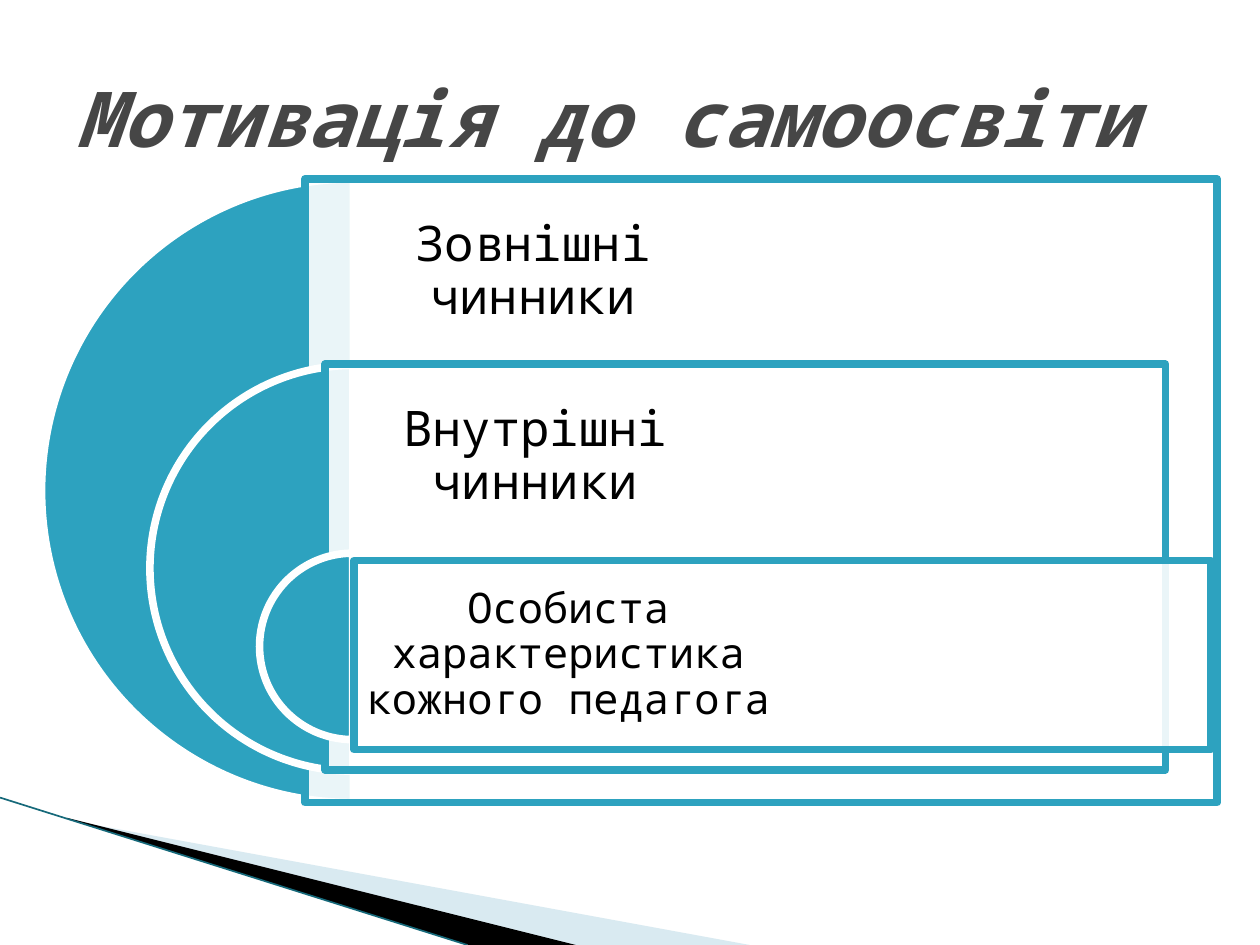
"""Build the slide on motivation for self-education."""
from dataclasses import dataclass

from lxml import etree
from pptx import Presentation
from pptx.dml.color import RGBColor
from pptx.enum.shapes import MSO_CONNECTOR, MSO_SHAPE
from pptx.enum.text import MSO_ANCHOR, PP_ALIGN
from pptx.oxml.ns import qn
from pptx.shapes.autoshape import Shape
from pptx.slide import Slide
from pptx.util import Inches, Pt

PIE = MSO_SHAPE.PIE
RECTANGLE = MSO_SHAPE.RECTANGLE
STRAIGHT = MSO_CONNECTOR.STRAIGHT
MIDDLE = MSO_ANCHOR.MIDDLE
CENTER = PP_ALIGN.CENTER
LEFT = PP_ALIGN.LEFT


@dataclass(frozen=True)
class Theme:
    font: str = "Noto Sans Mono"
    accent: str = "2DA2BF"
    white: str = "FFFFFF"
    black: str = "000000"
    title: str = "464646"
    pale: str = "A0CBDC"
    edge: str = "16697A"
    title_size: int = 44
    factor_size: int = 28
    detail_size: int = 24
    outline: float = 4.33
    edge_width: float = 0.95


@dataclass(frozen=True)
class Box:
    left: float
    top: float
    width: float
    height: float

    def lengths(self) -> tuple[int, ...]:
        return tuple(map(Inches, (self.left, self.top, self.width, self.height)))


@dataclass(frozen=True)
class Factor:
    text: str
    pie: Box
    panel: Box
    text_height: float
    size: int
    inset: float


@dataclass(frozen=True)
class Wedge:
    points: tuple[tuple[float, float], ...]
    color: str
    opacity: int = 100


THEME = Theme()
WEDGES = (
    Wedge(((0.55, 6.51), (5.95, 7.5), (4.56, 7.5), (0.55, 6.5)), THEME.pale, 40),
    Wedge(((0.53, 6.49), (4.57, 7.5), (3.72, 7.5), (0.54, 6.5)), THEME.black),
)
FACTORS = (
    Factor("Зовнішні чинники", Box(0.33, 1.42, 4.95, 4.95),
           Box(2.42, 1.42, 7.24, 4.95), 1.48, THEME.factor_size, 0.12),
    Factor("Внутрішні чинники", Box(1.19, 2.9, 3.22, 3.22),
           Box(2.58, 2.89, 6.67, 3.22), 1.48, THEME.factor_size, 0.12),
    Factor("Особиста характеристика кожного педагога", Box(2.06, 4.39, 1.48, 1.48),
           Box(2.81, 4.45, 6.8, 1.5), 1.5, THEME.detail_size, 0.1),
)


def fill_shape(shape: Shape, color: str, opacity: int = 100) -> None:
    """Give a shape a solid fill of the given opacity and no shadow."""
    shape.shadow.inherit = False
    shape.fill.solid()
    shape.fill.fore_color.rgb = RGBColor.from_string(color)
    if opacity < 100:
        color_element = shape.fill._xPr.find(qn("a:solidFill"))[0]
        etree.SubElement(color_element, qn("a:alpha")).set("val", str(opacity * 1000))


def add_wedge(slide: Slide, wedge: Wedge) -> None:
    """Draw one corner wedge."""
    start, *others = [(Inches(x), Inches(y)) for x, y in wedge.points]
    builder = slide.shapes.build_freeform(*start)
    builder.add_line_segments(others, close=True)
    shape = builder.convert_to_shape()
    fill_shape(shape, wedge.color, wedge.opacity)
    shape.line.fill.background()


def add_edge(slide: Slide) -> None:
    """Draw the thin line along the corner wedges."""
    edge = slide.shapes.add_connector(
        STRAIGHT, Inches(0), Inches(6.33), Inches(3.71), Inches(7.5))
    edge.line.color.rgb = RGBColor.from_string(THEME.edge)
    edge.line.width = Pt(THEME.edge_width)
    etree.SubElement(edge._element.spPr, qn("a:effectLst"))


def add_outlined(slide: Slide, kind: MSO_SHAPE, box: Box, fill: str, line: str,
                 opacity: int = 100) -> Shape:
    """Draw a filled preset shape with a thick outline."""
    shape = slide.shapes.add_shape(kind, *box.lengths())
    fill_shape(shape, fill, opacity)
    shape.line.color.rgb = RGBColor.from_string(line)
    shape.line.width = Pt(THEME.outline)
    return shape


def add_text(slide: Slide, box: Box, text: str, size: int, color: str, inset: float,
             alignment: PP_ALIGN = CENTER, spacing: float = 0.9,
             emphasis: bool = False) -> None:
    """Draw a vertically centred text box."""
    frame = slide.shapes.add_textbox(*box.lengths()).text_frame
    frame.word_wrap = True
    frame.vertical_anchor = MIDDLE
    frame.margin_left = frame.margin_right = Inches(inset)
    frame.margin_top = frame.margin_bottom = Inches(inset)
    paragraph = frame.paragraphs[0]
    paragraph.text = text
    paragraph.alignment = alignment
    paragraph.line_spacing = spacing
    font = paragraph.font
    font.name = THEME.font
    font.size = Pt(size)
    font.bold = font.italic = emphasis
    font.color.rgb = RGBColor.from_string(color)


def add_factor(slide: Slide, factor: Factor) -> None:
    """Draw a half disc, its panel and its label."""
    half_disc = add_outlined(slide, PIE, factor.pie, THEME.accent, THEME.white)
    half_disc.adjustments[0] = 54
    half_disc.adjustments[1] = 162
    panel = factor.panel
    add_outlined(slide, RECTANGLE, panel, THEME.white, THEME.accent, 90)
    label = Box(panel.left, panel.top, panel.width / 2, factor.text_height)
    add_text(slide, label, factor.text, factor.size, THEME.black, factor.inset)


def main() -> None:
    """Build and save the presentation."""
    presentation = Presentation()
    presentation.slide_width = Inches(10)
    presentation.slide_height = Inches(7.5)
    slide = presentation.slides.add_slide(presentation.slide_layouts[6])
    for wedge in WEDGES:
        add_wedge(slide, wedge)
    add_edge(slide)
    for factor in FACTORS:
        add_factor(slide, factor)
    add_text(slide, Box(0.5, 0.3, 9, 1.25), "Мотивація до самоосвіти",
             THEME.title_size, THEME.title, 0.1, LEFT, 1.0, True)
    presentation.save("out.pptx")


if __name__ == "__main__":
    main()
